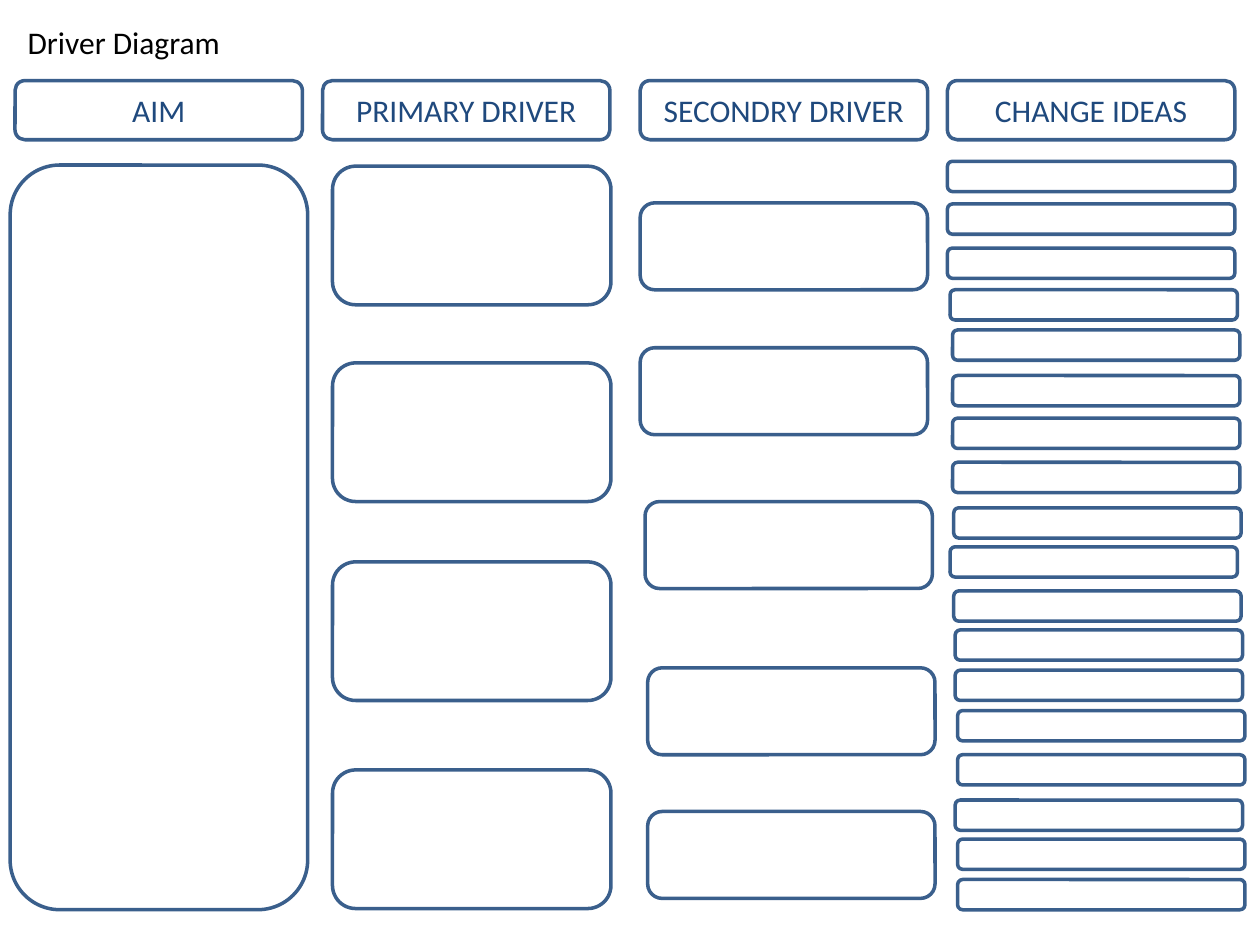
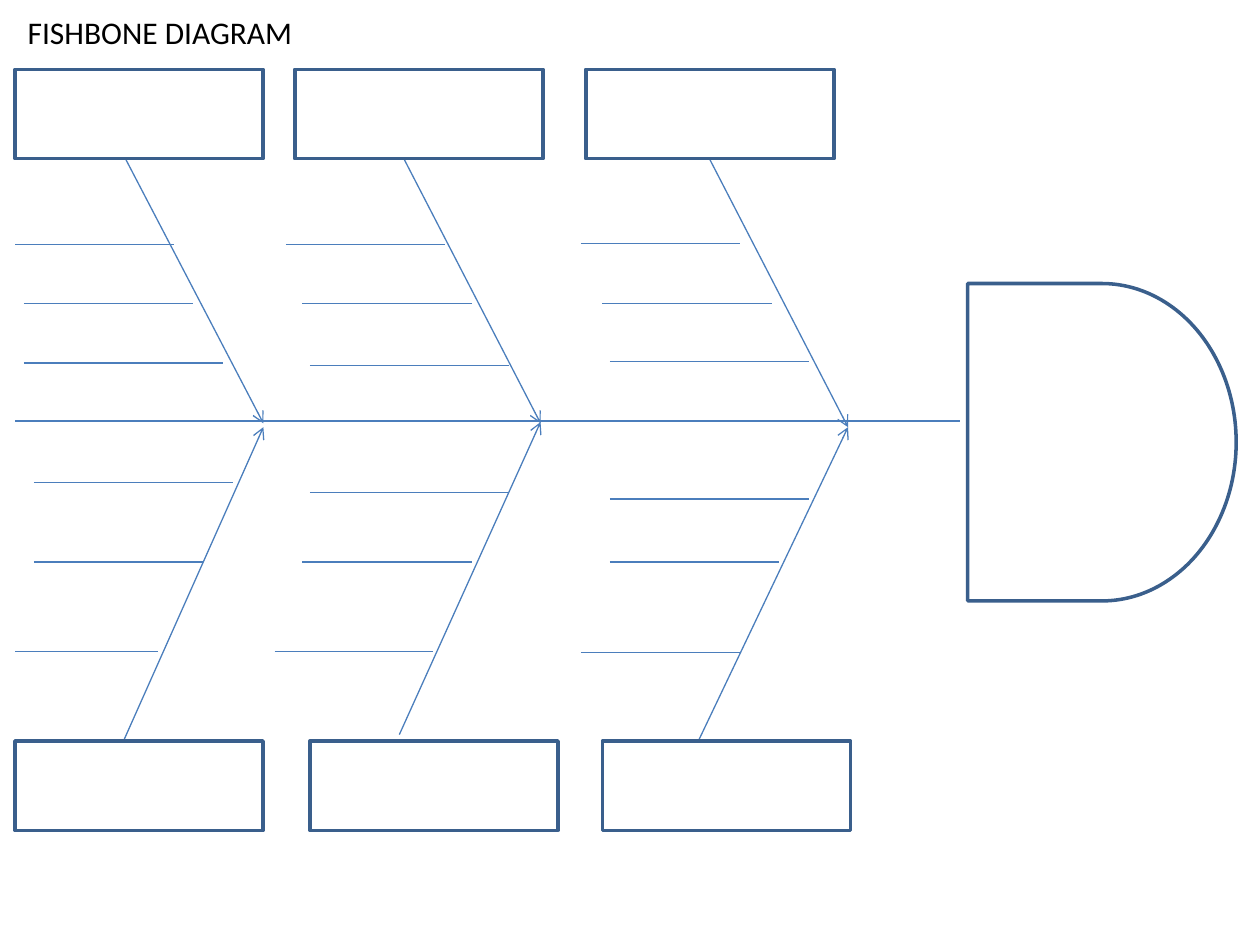
from pptx import Presentation
from pptx.dml.color import RGBColor
from pptx.enum.shapes import MSO_CONNECTOR, MSO_SHAPE
from pptx.enum.text import MSO_ANCHOR, PP_ALIGN
from pptx.oxml.ns import qn
from pptx.util import Pt
from lxml.etree import SubElement

FONT = "Calibri"
WHITE, BLACK, NAVY = "FFFFFF", "000000", "1F497D"
OUTLINE, BONE = "3A5F8C", "4B7EBC"
color = RGBColor.from_string


def add_box(slide, kind, left, top, width, height, text=""):
    shape = slide.shapes.add_shape(kind, Pt(left), Pt(top), Pt(width), Pt(height))
    shape.shadow.inherit = False
    shape.fill.solid()
    shape.fill.fore_color.rgb = color(WHITE)
    shape.line.color.rgb = color(OUTLINE)
    shape.line.width = Pt(2)
    if text:
        shape.text_frame.vertical_anchor = MSO_ANCHOR.MIDDLE
        paragraph = shape.text_frame.paragraphs[0]
        paragraph.alignment = PP_ALIGN.CENTER
        run = paragraph.add_run()
        run.text = text
        run.font.name, run.font.size = FONT, Pt(18)
        run.font.color.rgb = color(NAVY)


def add_bone(slide, start_x, start_y, end_x, end_y, arrow=False):
    connector = slide.shapes.add_connector(
        MSO_CONNECTOR.STRAIGHT, Pt(start_x), Pt(start_y), Pt(end_x), Pt(end_y))
    connector.line.color.rgb = color(BONE)
    connector.line.width = Pt(0.75)
    if arrow:
        SubElement(connector.line._get_or_add_ln(), qn("a:tailEnd")).set("type", "arrow")
    SubElement(connector._element.spPr, qn("a:effectLst"))


presentation = Presentation()
presentation.slide_width, presentation.slide_height = Pt(720), Pt(540)

slides = []
for title_text, top, width in [("Driver Diagram", 9.4, 181.4), ("FISHBONE DIAGRAM", 3.6, 231.1)]:
    slide = presentation.slides.add_slide(presentation.slide_layouts[5])
    title = slide.shapes.title
    title.left, title.top, title.width, title.height = Pt(8.6), Pt(top), Pt(width), Pt(29)
    title.text_frame.word_wrap = True
    title.text_frame.vertical_anchor = MSO_ANCHOR.TOP
    paragraph = title.text_frame.paragraphs[0]
    paragraph.alignment = PP_ALIGN.LEFT
    run = paragraph.add_run()
    run.text = title_text
    run.font.name, run.font.size = FONT, Pt(18)
    run.font.color.rgb = color(BLACK)
    slides.append(slide)
driver_slide, fishbone_slide = slides

ROUNDED = MSO_SHAPE.ROUNDED_RECTANGLE
COLUMN_WIDTH = 164.2
headings = [("AIM", 8.6), ("PRIMARY DRIVER", 184.3),
            ("SECONDRY DRIVER", 365.8), ("CHANGE IDEAS", 541.4)]
for heading, left in headings:
    add_box(driver_slide, ROUNDED, left, 46.1, COLUMN_WIDTH, 33.8, heading)

add_box(driver_slide, ROUNDED, 5.8, 94.3, 170, 425.5)

for top in [95, 207.4, 321.1, 440]:
    add_box(driver_slide, ROUNDED, 190, top, 159.1, 79.2)

change_ideas = [
    (541.4, 92.2), (541.4, 116.6), (541.4, 141.8), (542.9, 165.6), (544.3, 188.6), (544.3, 214.6),
    (544.3, 239), (544.3, 264.2), (545, 290.2), (542.9, 312.5), (545, 337.7), (545.8, 360),
    (545.8, 383), (547.2, 406.1), (547.2, 431.3), (545.8, 457.2), (547.2, 479.5), (547.2, 502.6)]
for left, top in change_ideas:
    add_box(driver_slide, ROUNDED, left, top, COLUMN_WIDTH, 17.3)

secondary_drivers = [(365.8, 115.9), (365.8, 198.7), (368.6, 286.6), (370.1, 381.6), (370.1, 463.7)]
for left, top in secondary_drivers:
    add_box(driver_slide, ROUNDED, left, top, COLUMN_WIDTH, 49.7)

add_box(fishbone_slide, MSO_SHAPE.FLOWCHART_DELAY, 553, 162, 153.4, 181.4)

ribs = [
    (70.6, 88.6, 150.5, 241.9), (229.7, 88.6, 308.9, 241.9), (405.4, 90.7, 484.6, 244.1),
    (70.6, 423.4, 150.5, 244.1), (228.2, 419.8, 308.9, 241.2), (396.7, 428.4, 484.6, 244.1)]
for rib in ribs:
    add_bone(fishbone_slide, *rib, arrow=True)

for top, lefts in [(39.6, [8.6, 168.5, 334.8]), (423.4, [8.6, 177.1, 344.2])]:
    for left in lefts:
        add_box(fishbone_slide, MSO_SHAPE.RECTANGLE, left, top, 141.8, 51.1)

add_bone(fishbone_slide, 8.6, 240.5, 548.6, 240.5)

causes_by_length = {
    81.4: [(8.6, 372.2)],
    90.7: [(8.6, 139.7), (163.4, 139.7), (331.9, 139), (157, 372.2), (331.9, 373)],
    96.8: [(13.7, 173.5), (172.8, 173.5), (344.2, 173.5),
           (19.4, 321.1), (172.8, 321.1), (348.5, 321.1)],
    113.6: [(13.7, 207.4), (177.1, 208.8), (348.5, 206.6),
            (19.4, 275.8), (177.1, 281.5), (348.5, 285.1)],
}
for length, causes in causes_by_length.items():
    for left, top in causes:
        add_bone(fishbone_slide, left, top, left + length, top)

presentation.save("out.pptx")
